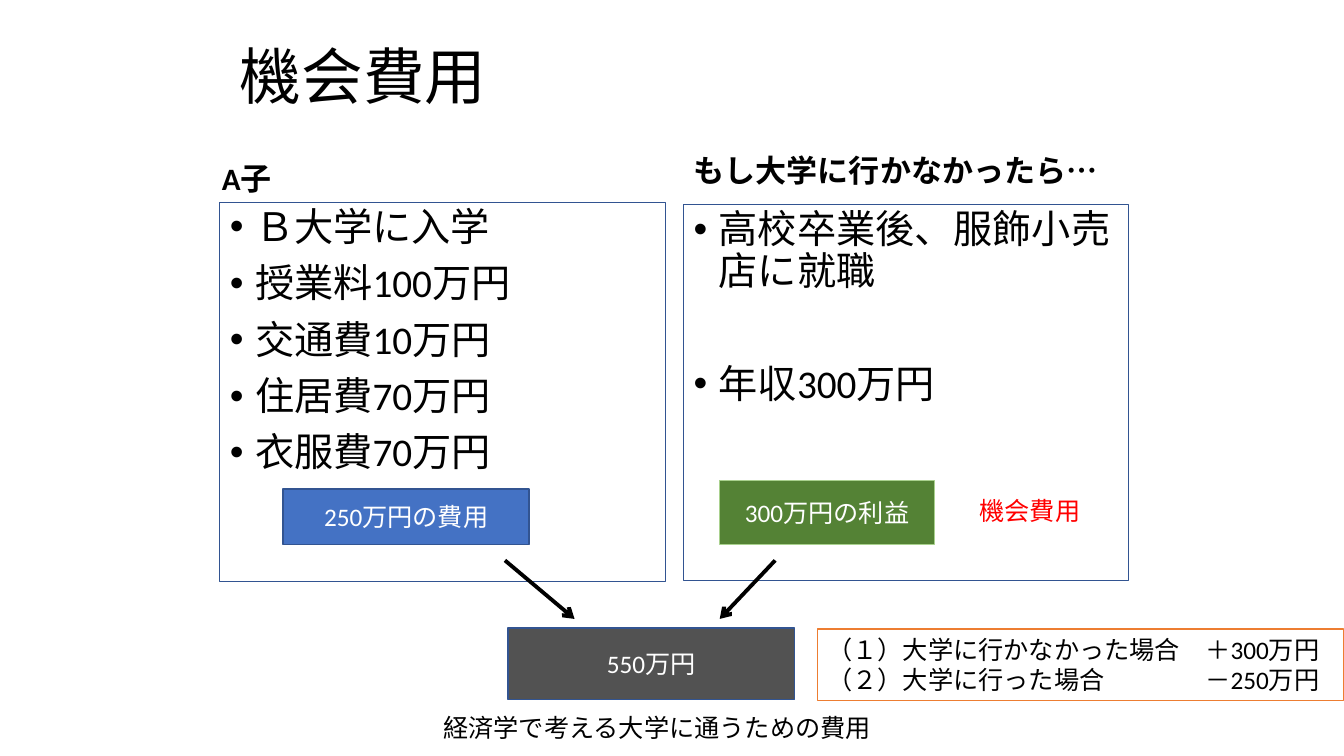
"""Build the slide on the opportunity cost of going to university."""
from lxml import etree
from pptx import Presentation
from pptx.dml.color import RGBColor
from pptx.enum.shapes import MSO_CONNECTOR, MSO_SHAPE
from pptx.enum.text import MSO_ANCHOR, MSO_AUTO_SIZE, PP_ALIGN
from pptx.oxml.ns import qn
from pptx.util import Pt

RECTANGLE = MSO_SHAPE.RECTANGLE
STRAIGHT = MSO_CONNECTOR.STRAIGHT
TOP, MIDDLE, BOTTOM = MSO_ANCHOR.TOP, MSO_ANCHOR.MIDDLE, MSO_ANCHOR.BOTTOM
LEFT, CENTER = PP_ALIGN.LEFT, PP_ALIGN.CENTER
NO_AUTOFIT = MSO_AUTO_SIZE.NONE

COLORS = {
    "black": "000000", "white": "FFFFFF", "red": "FF0000", "navy": "325491",
    "blue": "4472C4", "green": "548235", "lime": "A9D18E", "gray": "525252",
    "orange": "ED7D31",
}

TITLE = "機会費用"
COMPARISON = [
    {
        "heading": "A子", "heading_at": (151.2, 94.3, 318.2, 50.4),
        "items": ["Ｂ大学に入学", "授業料100万円", "交通費10万円", "住居費70万円", "衣服費70万円"],
        "items_at": (157, 144.7, 318.2, 270.7), "item_gap": 10,
    },
    {
        "heading": "もし大学に行かなかったら…", "heading_at": (488.2, 88.6, 318.2, 50.4),
        "items": ["高校卒業後、服飾小売店に就職", "年収300万円"],
        "items_at": (488.2, 146.2, 318.2, 268.6), "item_gap": 50,
    },
]
AMOUNTS = [
    ("250万円の費用", (202.3, 349.2, 175.7, 39.6), "blue", "navy"),
    ("300万円の利益", (514.1, 343.4, 153.4, 45.4), "green", "lime"),
    ("550万円", (362.9, 448.6, 204.5, 51.1), "gray", "navy"),
]
CAPTIONS = [
    ("機会費用", (692.6, 350.6, 102.2, 29), "red"),
    ("経済学で考える大学に通うための費用", (309.6, 505.4, 357.1, 29), "black"),
]
ARROWS = [((360.7, 400.3), (410.4, 442.1)), ((553.7, 400.3), (514.1, 442.1))]
OUTCOMES = ["（１）大学に行かなかった場合\t＋300万円", "（２）大学に行った場合\t－250万円"]
OUTCOMES_AT = (583.9, 449.3, 376.1, 51.1)
OUTCOME_TAB = 270
BULLET_INDENT = 18


def rgb(color):
    return RGBColor.from_string(COLORS[color])


def place(part, bounds):
    part.left, part.top, part.width, part.height = map(Pt, bounds)


def outline(part, color, width):
    part.line.color.rgb = rgb(color)
    part.line.width = Pt(width)


def write(part, lines, size=18, color="black", font="Calibri", bold=False, align=LEFT,
          anchor=TOP, spacing=1.0, gap=0, bullet=False, tab=None):
    frame = part.text_frame
    frame.word_wrap = True
    frame.auto_size = NO_AUTOFIT
    frame.vertical_anchor = anchor
    for index, line in enumerate(lines):
        paragraph = frame.add_paragraph() if index else frame.paragraphs[0]
        properties = paragraph._p.get_or_add_pPr()
        if bullet:
            properties.set("marL", str(Pt(BULLET_INDENT)))
            properties.set("indent", str(-Pt(BULLET_INDENT)))
            etree.SubElement(properties, qn("a:buFont"), typeface="Arial")
            etree.SubElement(properties, qn("a:buChar"), char="•")
        if tab:
            stops = etree.SubElement(properties, qn("a:tabLst"))
            etree.SubElement(stops, qn("a:tab"), pos=str(Pt(tab)), algn="l")
        paragraph.alignment = align
        paragraph.line_spacing = spacing
        paragraph.space_before = Pt(gap if index else 0)
        run = paragraph.add_run()
        run.text = line
        run.font.size = Pt(size)
        run.font.name = font
        run.font.bold = bold
        run.font.color.rgb = rgb(color)


def add_box(slide, bounds, fill, border, border_width):
    box = slide.shapes.add_shape(RECTANGLE, *map(Pt, bounds))
    box.shadow.inherit = False
    if fill:
        box.fill.solid()
        box.fill.fore_color.rgb = rgb(fill)
    else:
        box.fill.background()
    outline(box, border, border_width)
    return box


def add_arrow(slide, start, end):
    arrow = slide.shapes.add_connector(STRAIGHT, *map(Pt, start + end))
    outline(arrow, "black", 2.75)
    etree.SubElement(arrow.line._get_or_add_ln(), qn("a:tailEnd"), type="arrow")
    etree.SubElement(arrow._element.spPr, qn("a:effectLst"))


def main():
    deck = Presentation()
    deck.slide_width, deck.slide_height = Pt(960), Pt(540)
    slide = deck.slides.add_slide(deck.slide_layouts[4])
    title, *bodies = slide.placeholders

    place(title, (164.2, 20.2, 648, 73.4))
    write(title, [TITLE], size=44, anchor=MIDDLE, spacing=0.9)

    for side, heading, items in zip(COMPARISON, bodies[::2], bodies[1::2]):
        place(heading, side["heading_at"])
        write(heading, [side["heading"]], size=22.2, bold=True, anchor=BOTTOM, spacing=0.9)
        place(items, side["items_at"])
        outline(items, "navy", 0.75)
        write(items, side["items"], size=28, spacing=0.9, gap=side["item_gap"], bullet=True)

    for amount, bounds, fill, border in AMOUNTS:
        box = add_box(slide, bounds, fill, border, 1)
        write(box, [amount], color="white", align=CENTER, anchor=MIDDLE)

    for caption, bounds, color in CAPTIONS:
        box = slide.shapes.add_textbox(*map(Pt, bounds))
        write(box, [caption], color=color, font="Arial")

    for start, end in ARROWS:
        add_arrow(slide, start, end)

    outcomes = add_box(slide, OUTCOMES_AT, None, "orange", 0.75)
    outcomes.text_frame.margin_right = 0
    write(outcomes, OUTCOMES, tab=OUTCOME_TAB)

    deck.save("out.pptx")


if __name__ == "__main__":
    main()
